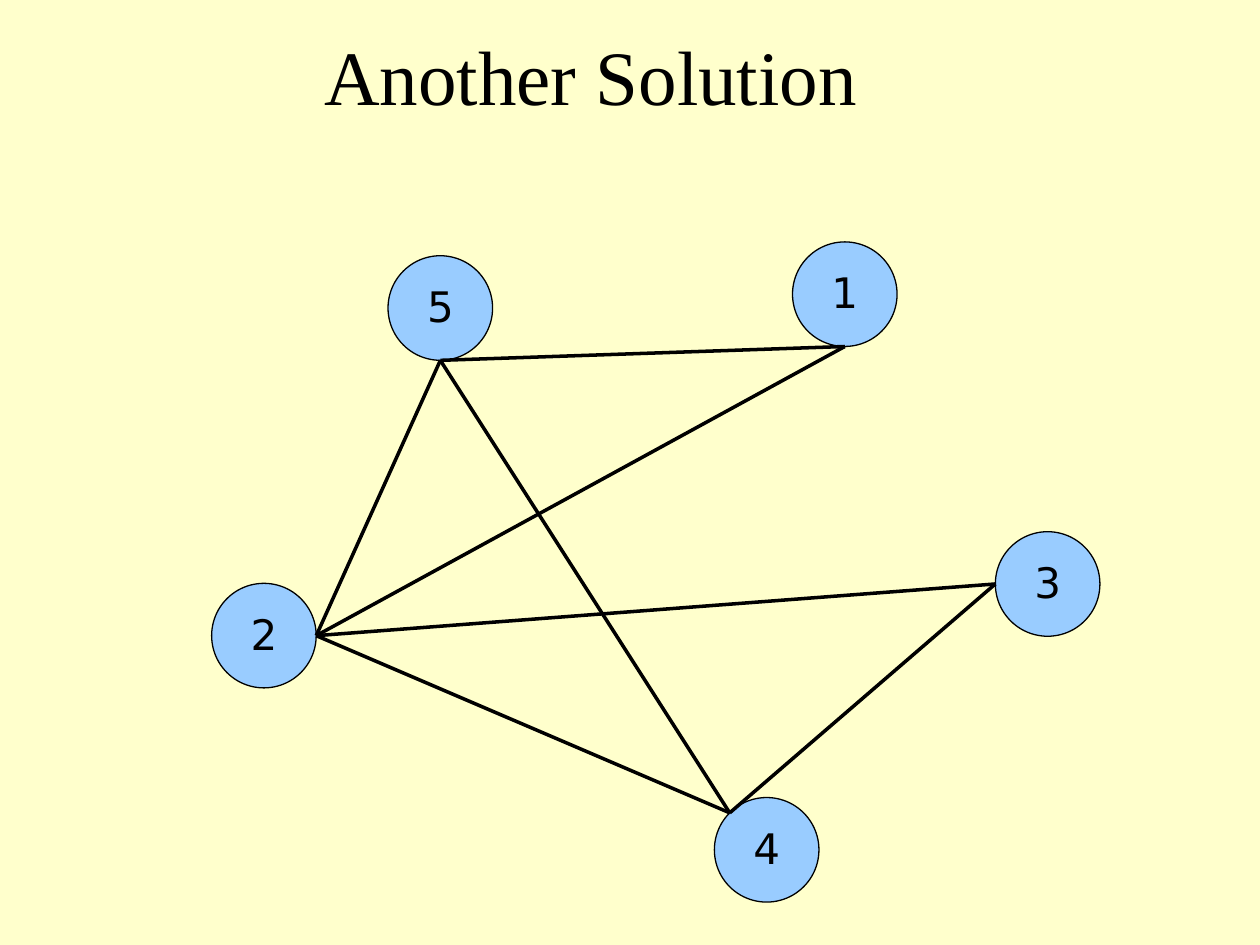
from math import cos, radians, sin

from lxml.etree import SubElement
from pptx import Presentation
from pptx.dml.color import RGBColor
from pptx.enum.shapes import MSO_CONNECTOR as CONNECTOR, MSO_SHAPE as SHAPE
from pptx.enum.text import MSO_ANCHOR as ANCHOR, MSO_AUTO_SIZE as AUTO_SIZE, PP_ALIGN as ALIGN
from pptx.oxml.ns import qn
from pptx.util import Inches, Pt

COLORS = {"background": "FFFFCC", "node": "99CCFF", "ink": "000000"}
DIAMETER = 0.83
LABEL_WIDTH, LABEL_HEIGHT = 0.41, 0.49

# Node label: left, top, and the angle (clockwise from the right) where edges meet it
NODES = {
    "4": (5.67, 6.33, 225),
    "3": (7.9, 4.22, 180),
    "2": (1.68, 4.63, 0),
    "5": (3.08, 2.03, 90),
    "1": (6.29, 1.92, 90),
}
EDGES = ["24", "23", "21", "15", "45", "25", "43"]


def color(name):
    return RGBColor.from_string(COLORS[name])


def add_text(shapes, text, left, top, width, height, *, font, size, wrap=True):
    box = shapes.add_textbox(Inches(left), Inches(top), Inches(width), Inches(height))
    frame = box.text_frame
    frame.word_wrap = wrap
    frame.auto_size = AUTO_SIZE.NONE if wrap else AUTO_SIZE.SHAPE_TO_FIT_TEXT
    frame.vertical_anchor = ANCHOR.MIDDLE
    para = frame.paragraphs[0]
    para.alignment = ALIGN.CENTER
    para.line_spacing = 0.96
    span = para.add_run()
    span.text = text
    span.font.name = font
    span.font.size = Pt(size)
    span.font.color.rgb = color("ink")


def add_node(page, label, left, top):
    """Group a circle with its centred label."""
    group = page.shapes.add_group_shape()
    circle = group.shapes.add_shape(
        SHAPE.OVAL, Inches(left), Inches(top), Inches(DIAMETER), Inches(DIAMETER))
    circle.shadow.inherit = False
    circle.fill.solid()
    circle.fill.fore_color.rgb = color("node")
    circle.line.color.rgb = color("ink")
    circle.line.width = Pt(0.75)
    add_text(group.shapes, label,
             left + (DIAMETER - LABEL_WIDTH) / 2, top + (DIAMETER - LABEL_HEIGHT) / 2,
             LABEL_WIDTH, LABEL_HEIGHT, font="DejaVu Sans", size=24, wrap=False)


def edge_point(left, top, angle):
    """Return the point on a node's rim where its edges meet."""
    radius = DIAMETER / 2
    return (Inches(left + radius + radius * cos(radians(angle))),
            Inches(top + radius + radius * sin(radians(angle))))


def add_edge(page, start, end):
    line = page.shapes.add_connector(
        CONNECTOR.STRAIGHT, *edge_point(*start), *edge_point(*end))
    line.line.color.rgb = color("ink")
    line.line.width = Pt(2)
    SubElement(line._element.spPr, qn("a:effectLst"))


def add_graph(page, left, top):
    nodes = {label: (left + x, top + y, angle) for label, (x, y, angle) in NODES.items()}
    for label, (x, y, _) in nodes.items():
        add_node(page, label, x, y)
    for start, end in EDGES:
        add_edge(page, nodes[start], nodes[end])


def main():
    deck = Presentation()
    deck.slide_width, deck.slide_height = Inches(10), Inches(7.5)
    page = deck.slides.add_slide(deck.slide_layouts[6])
    page.background.fill.solid()
    page.background.fill.fore_color.rgb = color("background")
    add_text(page.shapes, "Another Solution", 0.44, 0.25, 8.5, 0.75,
             font="Times New Roman", size=44)
    add_graph(page, 0, 0)
    deck.save("out.pptx")


if __name__ == "__main__":
    main()
